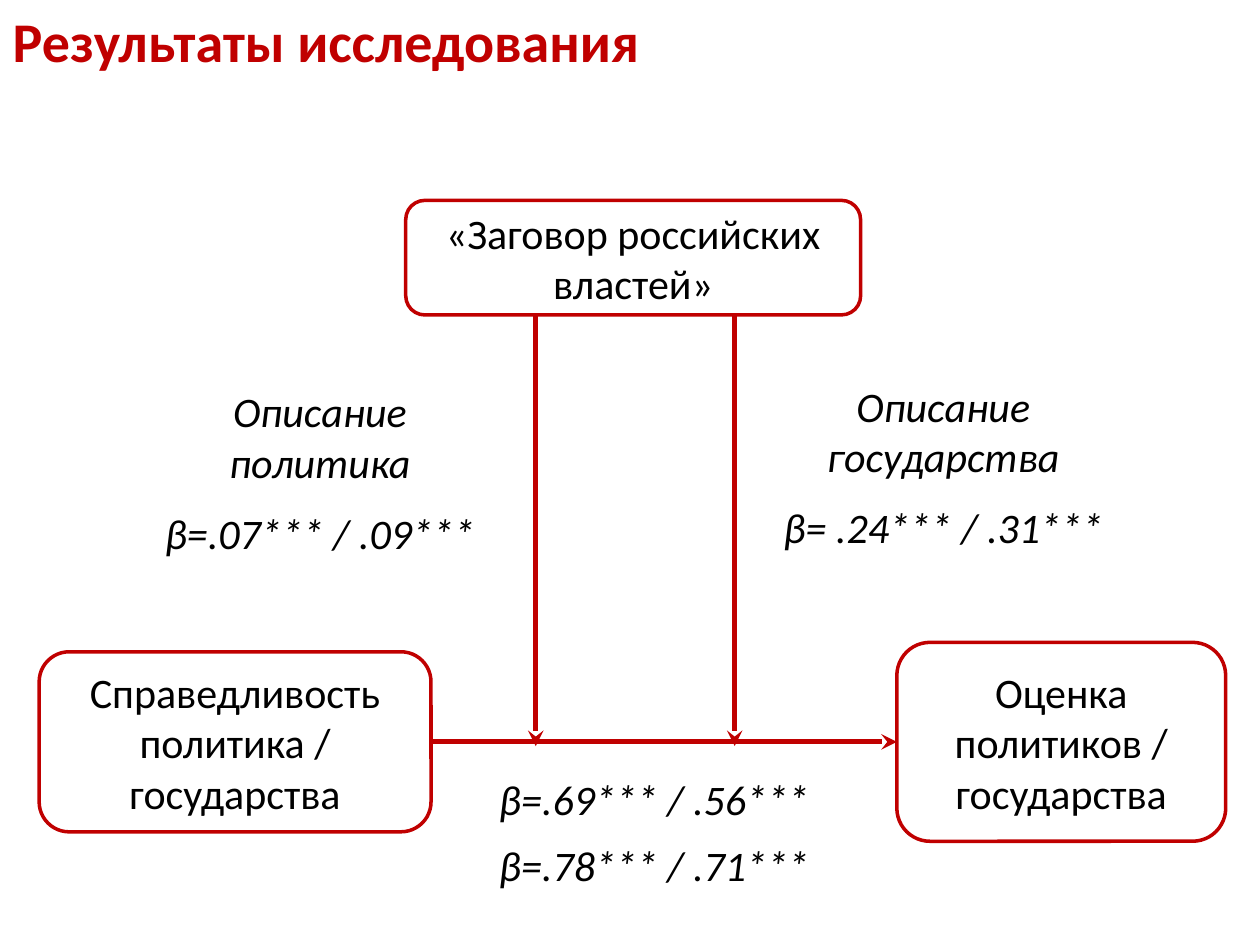
from lxml.etree import SubElement
from pptx import Presentation
from pptx.dml.color import RGBColor
from pptx.enum.shapes import MSO_CONNECTOR, MSO_SHAPE
from pptx.enum.text import MSO_ANCHOR, PP_ALIGN
from pptx.oxml.ns import qn
from pptx.util import Cm, Pt

# Content: places are left, top, width, height in cm
COLORS = {"accent": "C00000", "text": "000000"}
FONT = "Calibri"
TITLE = ("Результаты исследования", (0, 0, 16.36, 1.63))
BOXES = {
    "moderator": ("«Заговор российских властей»", (8.18, 4.04, 9.17, 2.31)),
    "predictor": ("Справедливость политика / государства", (0.79, 13.14, 7.9, 3.63)),
    "outcome": ("Оценка политиков / государства", (18.08, 12.95, 6.63, 4.01)),
}
LABELS = [
    (["Описание политика", "β=.07*** / .09***"], (2.87, 7.65, 7.16, 3.76)),
    (["Описание государства", "β= .24*** / .31***"], (15.52, 7.54, 6.99, 3.76)),
    (["β=.69*** / .56***"], (9.12, 15.47, 8.13, 1.27)),
    (["β=.78*** / .71***"], (9.12, 16.79, 8.13, 1.27)),
]
MODERATION_X = [10.8, 14.81]
MODERATION_END = 15.04


def color(name):
    return RGBColor.from_string(COLORS[name])


def place(values):
    return [Cm(value) for value in values]


def write(frame, lines, size=24, name="text", align=PP_ALIGN.CENTER,
          bold=False, italic=False, after=0):
    frame.word_wrap = True
    for index, line in enumerate(lines):
        paragraph = frame.paragraphs[0] if index == 0 else frame.add_paragraph()
        paragraph.text = line
        paragraph.alignment = align
        paragraph.space_after = Pt(after)
        font = paragraph.font
        font.name, font.size = FONT, Pt(size)
        font.bold, font.italic = bold, italic
        font.color.rgb = color(name)


def add_arrow(page, x1, y1, x2, y2):
    arrow = page.shapes.add_connector(MSO_CONNECTOR.STRAIGHT, x1, y1, x2, y2)
    arrow.line.color.rgb = color("accent")
    arrow.line.width = Pt(3)
    SubElement(arrow.line._get_or_add_ln(), qn("a:tailEnd"), type="stealth")
    SubElement(arrow._element.spPr, qn("a:effectLst"))
    return arrow


deck = Presentation()
deck.slide_width, deck.slide_height = Cm(25.4), Cm(19.05)
page = deck.slides.add_slide(deck.slide_layouts[5])

# Title
text, area = TITLE
title = page.shapes.title
title.left, title.top, title.width, title.height = place(area)
title.text_frame.vertical_anchor = MSO_ANCHOR.TOP
write(title.text_frame, [text], 32, "accent", PP_ALIGN.LEFT, bold=True)

# Variables of the model
boxes = {}
for key, (text, area) in BOXES.items():
    box = page.shapes.add_shape(MSO_SHAPE.ROUNDED_RECTANGLE, *place(area))
    box.shadow.inherit = False
    box.fill.background()
    box.line.color.rgb = color("accent")
    box.line.width = Pt(2)
    box.text_frame.vertical_anchor = MSO_ANCHOR.MIDDLE
    write(box.text_frame, [text])
    boxes[key] = box

# Main effect, then the two moderating effects
effect = add_arrow(page, 0, 0, 0, 0)
effect.begin_connect(boxes["predictor"], 3)
effect.end_connect(boxes["outcome"], 1)
moderator = boxes["moderator"]
for x in MODERATION_X:
    add_arrow(page, Cm(x), moderator.top + moderator.height, Cm(x), Cm(MODERATION_END))

# Coefficients
for lines, area in LABELS:
    label = page.shapes.add_textbox(*place(area))
    write(label.text_frame, lines, italic=True, after=12)

deck.save("out.pptx")
